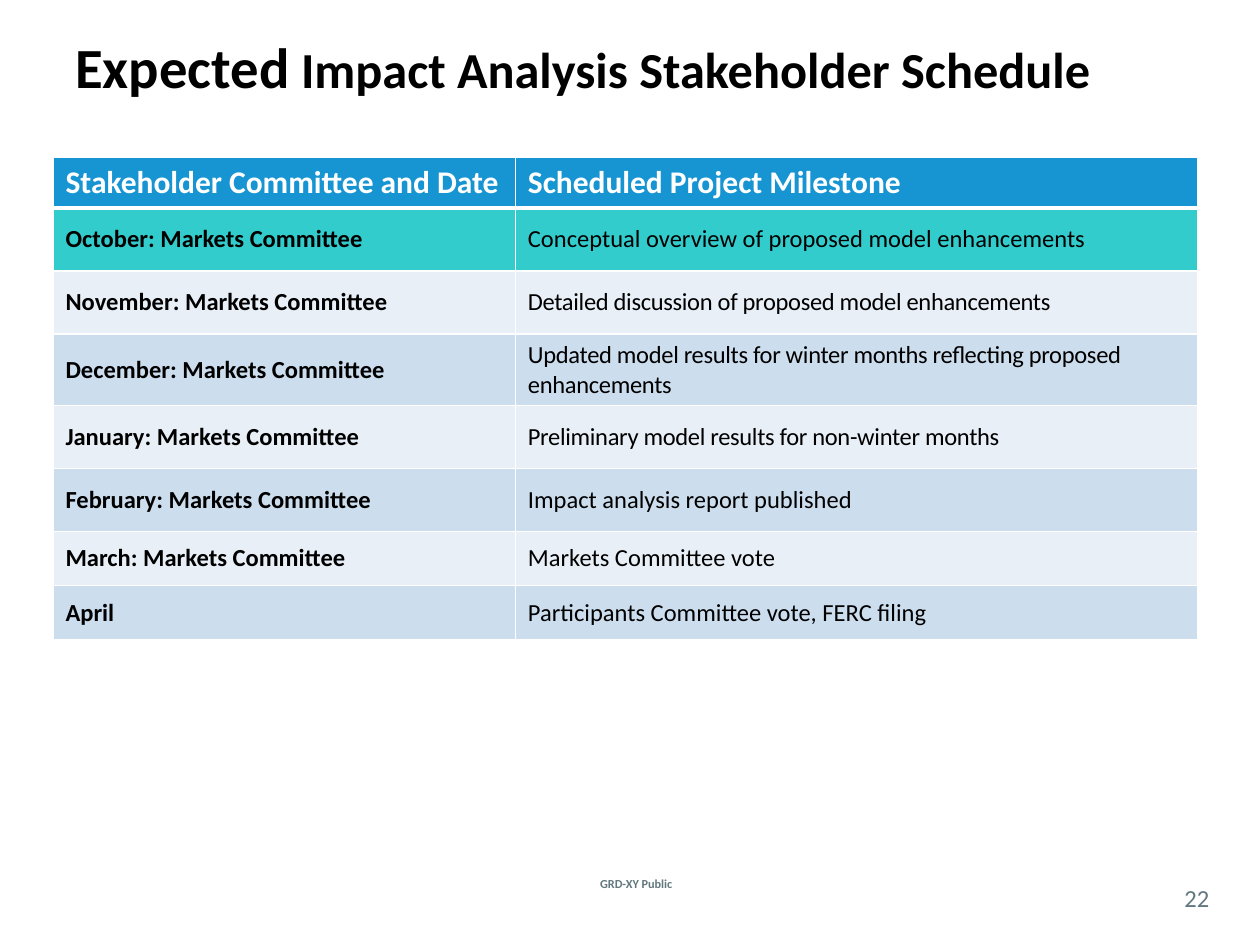
from lxml import etree
from pptx import Presentation
from pptx import util as u
from pptx.dml.color import RGBColor
from pptx.enum import text
from pptx.oxml.ns import qn

BLACK = RGBColor(0x00, 0x00, 0x00)
WHITE = RGBColor(0xFF, 0xFF, 0xFF)
SLATE = RGBColor(0x62, 0x77, 0x7F)
BLUE = RGBColor(0x17, 0x95, 0xD2)
TEAL = RGBColor(0x33, 0xCC, 0xCC)
BANDS = RGBColor(0xCC, 0xDD, 0xEE), RGBColor(0xE8, 0xEF, 0xF7)

FACE = "Calibri"
WIDE, HIGH = u.Inches(10), u.Inches(7.5)
COLS = 3.67, 5.42
ROWS = 0.36, 0.5, 0.5, 0.51, 0.5, 0.5, 0.43, 0.43
TIGHT = 2, 3, 4
HEAD = "Stakeholder Committee and Date", "Scheduled Project Milestone"
STEPS = (
    ("October: Markets Committee", "Conceptual overview of proposed model enhancements"),
    ("November: Markets Committee", "Detailed discussion of proposed model enhancements"),
    ("December: Markets Committee",
     "Updated model results for winter months reflecting proposed enhancements"),
    ("January: Markets Committee", "Preliminary model results for non-winter months"),
    ("February: Markets Committee", "Impact analysis report published"),
    ("March: Markets Committee", "Markets Committee vote"),
    ("April", "Participants Committee vote, FERC filing"),
)


def style(font, size, color, bold=False):
    """Set face, size, colour and weight of a font."""
    font.name, font.size, font.bold = FACE, u.Pt(size), bold
    font.color.rgb = color


def label(slide, box, runs, color, bold=False, align=text.PP_ALIGN.CENTER, inset=True):
    """Add a text box placed by shares of the slide, with (words, size) runs."""
    left, top, width, height = box
    frame = slide.shapes.add_textbox(
        int(left * WIDE), int(top * HIGH), int(width * WIDE), int(height * HIGH)).text_frame
    frame.word_wrap = True
    frame.vertical_anchor = text.MSO_ANCHOR.MIDDLE
    if not inset:
        frame.margin_left = frame.margin_right = frame.margin_top = frame.margin_bottom = 0
    para = frame.paragraphs[0]
    para.alignment = align
    style(para.font, runs[0][1], color, bold)
    for words, size in runs:
        run = para.add_run()
        run.text = words
        style(run.font, size, color, bold)


def edge(cell, base):
    """Draw white borders round a cell, the bottom one base points wide."""
    props = cell._tc.get_or_add_tcPr()
    for spot, (side, width) in enumerate(zip("LRTB", (1, 1, 1, base))):
        line = etree.Element(qn(f"a:ln{side}"), w=str(u.Pt(width)))
        fill = etree.SubElement(line, qn("a:solidFill"))
        etree.SubElement(fill, qn("a:srgbClr"), val=str(WHITE))
        props.insert(spot, line)


def fill_cell(cell, words, fill, size, color, bold, base=1, tight=False):
    """Write one table cell with its fill, borders and letter spacing."""
    cell.fill.solid()
    cell.fill.fore_color.rgb = fill
    cell.vertical_anchor = text.MSO_ANCHOR.MIDDLE
    edge(cell, base)
    para = cell.text_frame.paragraphs[0]
    run = para.add_run()
    run.text = words
    style(para.font, size, color, bold)
    style(run.font, size, color, bold)
    if tight:
        run.font._element.set("spc", "-20")


def schedule(slide):
    """Add the table of committee dates and milestones."""
    grid = slide.shapes.add_table(
        len(ROWS), len(COLS), u.Inches(0.42), u.Inches(1.25),
        u.Inches(sum(COLS)), u.Inches(sum(ROWS))).table
    for col, width in zip(grid.columns, COLS):
        col.width = u.Inches(width)
    for row, height in zip(grid.rows, ROWS):
        row.height = u.Inches(height)
    for col, words in enumerate(HEAD):
        fill_cell(grid.cell(0, col), words, BLUE, 18, WHITE, True, base=3)
    for row, step in enumerate(STEPS, 1):
        fill = TEAL if row == 1 else BANDS[(row + 1) % 2]
        for col, words in enumerate(step):
            fill_cell(grid.cell(row, col), words, fill, 14, BLACK, col == 0,
                      tight=col == 1 and row in TIGHT)


def main():
    """Build the schedule slide and save it."""
    deck = Presentation()
    deck.slide_width, deck.slide_height = WIDE, HIGH
    slide = deck.slides.add_slide(deck.slide_layouts[6])
    label(slide, (0.43, 0.92, 0.15, 0.03), [("GRD-XY Public", 7)], SLATE, True)
    label(slide, (0.05, 0.03, 0.9, 0.08),
          [("Expected", 32.4), (" Impact Analysis Stakeholder Schedule", 28.8)],
          BLACK, True, text.PP_ALIGN.LEFT)
    label(slide, (0.93, 0.93, 0.04, 0.04), [("22", 14)], SLATE, inset=False)
    schedule(slide)
    deck.save("out.pptx")


if __name__ == "__main__":
    main()
